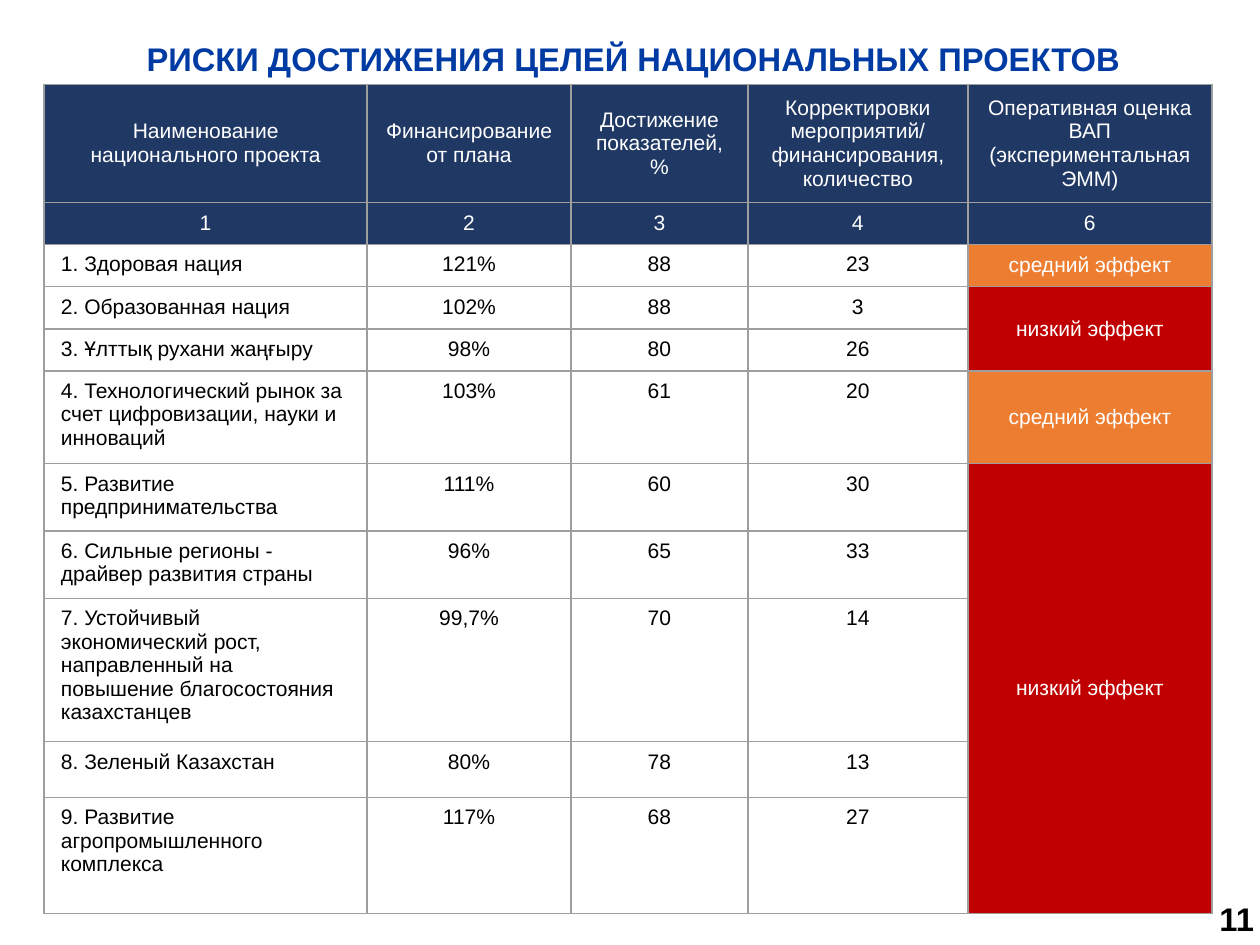
from lxml import etree
from pptx import Presentation, oxml
from pptx.dml.color import RGBColor
from pptx.enum import text
from pptx.util import Pt

COLORS = {"title": "003BA3", "header": "203864", "border": "9E9E9E",
          "medium": "ED7D31", "low": "C00000", "white": "FFFFFF", "black": "000000"}
WIDTHS = [138.4, 87.4, 75.8, 94.3, 104.6]
HEIGHTS = [48.8, 17.5, 17.5, 17.5, 17.5, 38.2, 27.9, 27.9, 59.1, 23.9, 49.8]
HEADERS = [
    ["Наименование\nнационального проекта", "Финансирование от плана",
     "Достижение показателей,%", "Корректировки мероприятий/ финансирования, количество",
     "Оперативная оценка ВАП\n(экспериментальная ЭММ)"],
    ["1", "2", "3", "4", "6"],
]
PROJECTS = [
    ["1. Здоровая нация", "121%", "88", "23"],
    ["2. Образованная нация", "102%", "88", "3"],
    ["3. Ұлттық рухани жаңғыру", "98%", "80", "26"],
    ["4. Технологический рынок за счет цифровизации, науки и инноваций", "103%", "61", "20"],
    ["5. Развитие предпринимательства", "111%", "60", "30"],
    ["6. Сильные регионы - драйвер развития страны", "96%", "65", "33"],
    ["7. Устойчивый экономический рост, направленный на повышение благосостояния казахстанцев",
     "99,7%", "70", "14"],
    ["8. Зеленый Казахстан", "80%", "78", "13"],
    ["9. Развитие агропромышленного комплекса", "117%", "68", "27"],
]
RATINGS = [("medium", 1), ("low", 2), ("medium", 1), ("low", 5)]
EFFECTS = {"medium": "средний эффект", "low": "низкий эффект"}


def write(frame, words, size, color, align, bold=False):
    """Put formatted Arial text into a text frame."""
    frame.text = words
    for para in frame.paragraphs:
        para.alignment = align
        for span in para.runs:
            span.font.name = "Arial"
            span.font.size = Pt(size)
            span.font.bold = bold
            span.font.color.rgb = RGBColor.from_string(COLORS[color])


def add_label(page, place, words, color, align, inset, wrap):
    """Add a bold 14-point text box."""
    box = page.shapes.add_textbox(*(Pt(length) for length in place))
    frame = box.text_frame
    frame.word_wrap = wrap
    frame.margin_left = frame.margin_right = Pt(inset[0])
    frame.margin_top = frame.margin_bottom = Pt(inset[1])
    write(frame, words, 14, color, align, True)


def add_borders(cell):
    """Draw a thin grey line on all four sides of a cell."""
    properties = cell._tc.get_or_add_tcPr()
    for side in ("lnL", "lnR", "lnT", "lnB"):
        line = etree.SubElement(properties, oxml.ns.qn(f"a:{side}"), w=str(Pt(0.75)))
        fill = etree.SubElement(line, oxml.ns.qn("a:solidFill"))
        etree.SubElement(fill, oxml.ns.qn("a:srgbClr"), val=COLORS["border"])


def fill_cell(cell, words, align=text.PP_ALIGN.CENTER, fill=None):
    """Write a cell: white centred text on a fill, or black text without one."""
    write(cell.text_frame, words, 9, "white" if fill else "black", align)
    if fill:
        cell.fill.solid()
        cell.fill.fore_color.rgb = RGBColor.from_string(COLORS[fill])
        cell.vertical_anchor = text.MSO_ANCHOR.MIDDLE
    else:
        cell.fill.background()


def add_risk_table(page):
    """Build the table of national projects with merged ratings."""
    frame = page.shapes.add_table(len(HEIGHTS), len(WIDTHS), Pt(18.9), Pt(36.2),
                                  Pt(sum(WIDTHS)), Pt(sum(HEIGHTS)))
    table = frame.table
    table.first_row = table.horz_banding = False
    for column, width in zip(table.columns, WIDTHS):
        column.width = Pt(width)
    for row, height in zip(table.rows, HEIGHTS):
        row.height = Pt(height)
    for cell in table.iter_cells():
        add_borders(cell)
    for row, names in enumerate(HEADERS):
        for column, name in enumerate(names):
            fill_cell(table.cell(row, column), name, fill="header")
    for row, values in enumerate(PROJECTS, len(HEADERS)):
        for column, value in enumerate(values):
            align = text.PP_ALIGN.CENTER if column else text.PP_ALIGN.LEFT
            fill_cell(table.cell(row, column), value, align)
    row, last = len(HEADERS), len(WIDTHS) - 1
    for rating, count in RATINGS:
        cell = table.cell(row, last)
        if count > 1:
            cell.merge(table.cell(row + count - 1, last))
        fill_cell(cell, EFFECTS[rating], fill=rating)
        row += count


def main():
    """Build the slide and save the deck."""
    deck = Presentation()
    deck.slide_width, deck.slide_height = Pt(540), Pt(405)
    page = deck.slides.add_slide(deck.slide_layouts[6])
    add_label(page, (23.8, 11.5, 495.4, 24.5), "РИСКИ ДОСТИЖЕНИЯ ЦЕЛЕЙ НАЦИОНАЛЬНЫХ ПРОЕКТОВ",
              "title", text.PP_ALIGN.CENTER, (5, 5), True)
    add_risk_table(page)
    add_label(page, (515.5, 381.6, 30.2, 24.5), "11", "black", text.PP_ALIGN.LEFT,
              (7.2, 3.6), False)
    deck.save("out.pptx")


if __name__ == "__main__":
    main()
